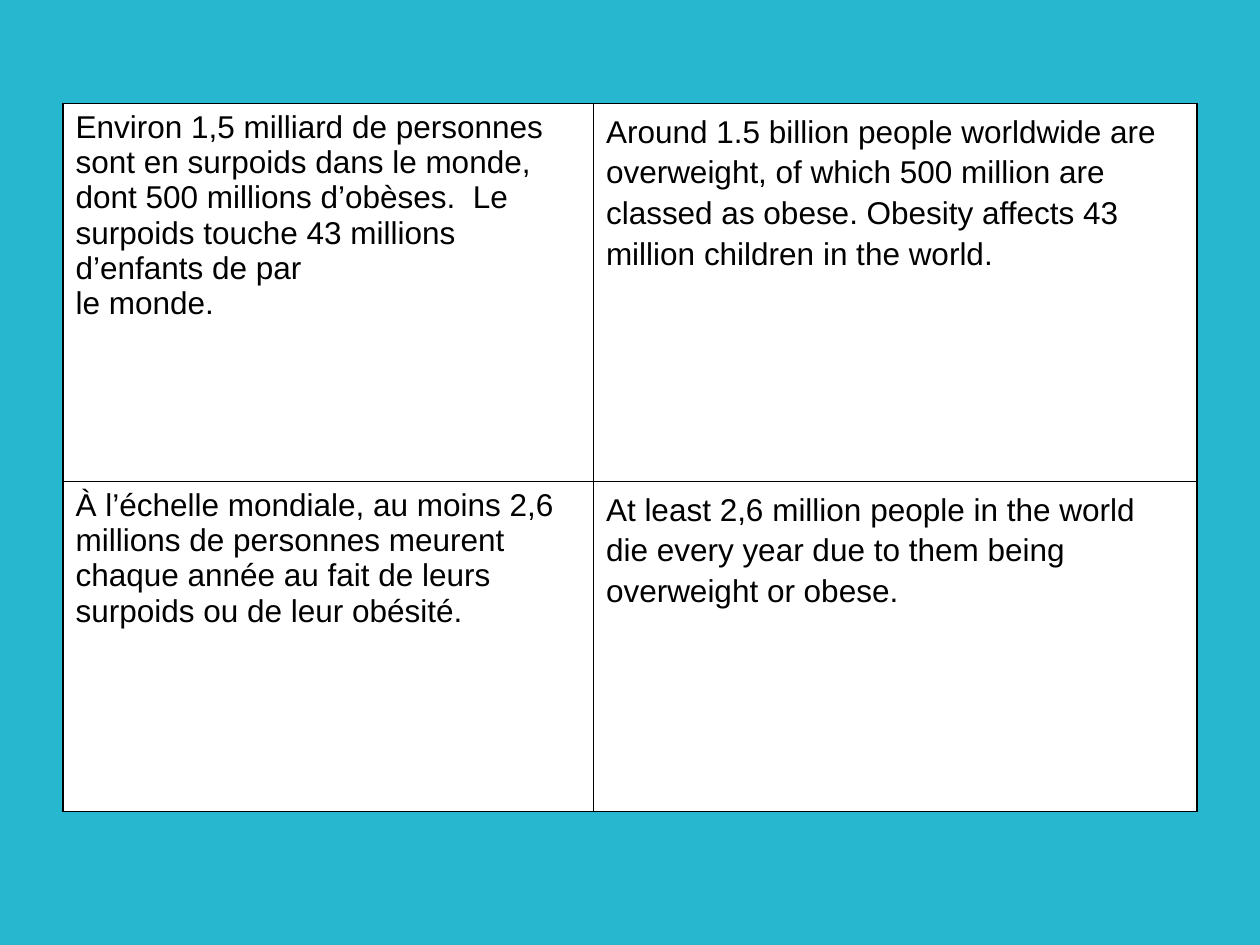
from lxml import etree
from pptx import Presentation
from pptx import util as u
from pptx.dml.color import RGBColor
from pptx.oxml import ns

theme = {
    "back": RGBColor.from_string("27B8CF"),
    "cell": RGBColor.from_string("FFFFFF"),
    "ink": RGBColor.from_string("000000"),
    "font": "Arial",
    "size": u.Pt(18),
    "line": u.Pt(1),
}

# French on the left, English on the right; one paragraph per list item
rows = [
    (
        [
            "Environ 1,5 milliard de personnes sont en surpoids dans le monde, "
            "dont 500 millions d’obèses.  Le surpoids touche 43 millions "
            "d’enfants de par",
            "le monde.",
        ],
        [
            "Around 1.5 billion people worldwide are overweight, of which "
            "500 million are classed as obese. Obesity affects 43 million "
            "children in the world.",
        ],
    ),
    (
        [
            "À l’échelle mondiale, au moins 2,6 millions de personnes meurent "
            "chaque année au fait de leurs surpoids ou de leur obésité.",
        ],
        [
            "At least 2,6 million people in the world die every year due to "
            "them being overweight or obese.",
        ],
    ),
]
widths = [4.21, 4.79]
heights = [3, 2.62]


def add_edges(cell):
    """Draw a thin line on all four sides; call before the cell is filled."""
    props = cell._tc.get_or_add_tcPr()
    for side in ("lnL", "lnR", "lnT", "lnB"):
        line = etree.SubElement(props, ns.qn("a:" + side), w=str(theme["line"]))
        fill = etree.SubElement(line, ns.qn("a:solidFill"))
        etree.SubElement(fill, ns.qn("a:srgbClr"), val=str(theme["ink"]))


# Slide and background
prs = Presentation()
prs.slide_width = u.Inches(10)
prs.slide_height = u.Inches(7.5)
slide = prs.slides.add_slide(prs.slide_layouts[6])
slide.background.fill.solid()
slide.background.fill.fore_color.rgb = theme["back"]

# Table frame
table = slide.shapes.add_table(
    len(rows), len(widths), u.Inches(0.5), u.Inches(0.82),
    u.Inches(sum(widths)), u.Inches(sum(heights)),
).table
table.first_row = False
table.horz_banding = False
for col, width in zip(table.columns, widths):
    col.width = u.Inches(width)
for row, height in zip(table.rows, heights):
    row.height = u.Inches(height)

# Cells
for r, row in enumerate(rows):
    for c, paras in enumerate(row):
        cell = table.cell(r, c)
        add_edges(cell)
        cell.fill.solid()
        cell.fill.fore_color.rgb = theme["cell"]
        cell.text_frame.text = "\n".join(paras)
        for para in cell.text_frame.paragraphs:
            if c == 1:  # the English column is set more loosely
                para.line_spacing = 1.15
                para.space_before = u.Pt(12)
            for run in para.runs:
                run.font.name = theme["font"]
                run.font.size = theme["size"]
                run.font.color.rgb = theme["ink"]

prs.save("out.pptx")
